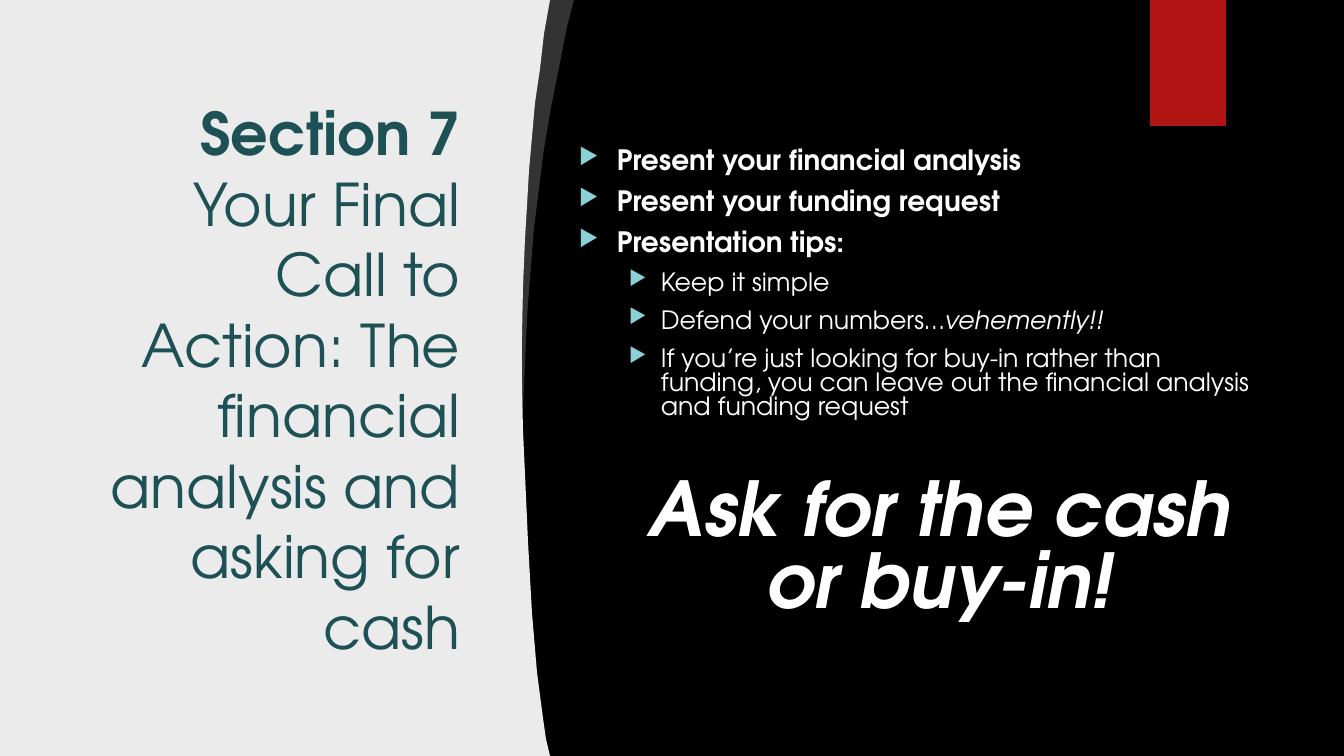
"""Build the Section 7 slide: curved title panel, bulleted tips and a closing call."""
from lxml import etree
from pptx import Presentation
from pptx.dml.color import RGBColor
from pptx.enum.shapes import MSO_SHAPE as SHAPE
from pptx.enum.text import MSO_ANCHOR as ANCHOR, PP_ALIGN as ALIGN
from pptx.oxml.ns import qn
from pptx.util import Pt

PX = 914400 / 100.8
FONT = "TeX Gyre Adventor"
BLACK, WHITE, RED = "000000", "FFFFFF", "B01513"
PANEL, TEAL, AQUA = "EBEBEB", "1E5155", "8AD0D6"


def paint(fill, color):
    fill.solid()
    fill.fore_color.rgb = RGBColor.from_string(color)


def add_run(p, text, size, color, bold=False, italic=False):
    r = p.add_run()
    r.text = text
    r.font.name, r.font.size = FONT, Pt(size)
    r.font.bold, r.font.italic = bold, italic
    r.font.color.rgb = RGBColor.from_string(color)


prs = Presentation()
prs.slide_width, prs.slide_height = round(1344 * PX), round(756 * PX)
s = prs.slides.add_slide(prs.slide_layouts[6])
paint(s.background.fill, BLACK)

band = [(574, 0), (521, 0), (520, 18), (515, 116), (512, 228), (512, 333),
        (516, 405), (523, 409), (524, 387), (526, 341), (528, 304), (531, 267),
        (534, 228), (539, 189), (544, 149), (551, 108), (559, 68), (567, 27)]
panel = [(0, 0), (550, 0), (544, 34), (540, 69), (535, 103), (532, 137),
         (529, 171), (527, 206), (525, 239), (523, 288), (522, 337), (522, 384),
         (523, 429), (525, 474), (528, 541), (532, 613), (537, 672), (543, 718),
         (546, 739), (550, 756), (0, 756)]
backdrop = s.shapes.add_shape(SHAPE.RECTANGLE, 0, 0, prs.slide_width, prs.slide_height)
outlines = []
for points in (band, panel):
    builder = s.shapes.build_freeform(*points[0], scale=PX)
    builder.add_line_segments(points[1:], close=True)
    outlines.append(builder.convert_to_shape())
tab = s.shapes.add_shape(SHAPE.RECTANGLE, *[round(v * PX) for v in (1150, 0, 76, 126)])
for sp, color in zip((backdrop, *outlines, tab), (BLACK, WHITE, PANEL, RED)):
    paint(sp.fill, color)
    sp.line.fill.background()
    sp.shadow.inherit = False
band_color = outlines[0].fill._xPr.find(qn("a:solidFill"))[0]
etree.SubElement(band_color, qn("a:alpha"), val="20000")

frames = []
for box in ((58, 84, 412, 590), (569, 144, 691, 530)):
    tf = s.shapes.add_textbox(*[round(v * PX) for v in box]).text_frame
    tf.word_wrap = True
    frames.append(tf)
title, body = frames

title.vertical_anchor = ANCHOR.MIDDLE
p = title.paragraphs[0]
p.alignment = ALIGN.RIGHT
add_run(p, "Section 7", 42, TEAL, bold=True)
p.add_line_break()
add_run(p, "Your Final Call to Action: The financial analysis and asking for cash", 42, TEAL)

bullets = [
    (0, ["Present your financial analysis"]),
    (0, ["Present your funding request"]),
    (0, ["Presentation tips:"]),
    (1, ["Keep it simple"]),
    (1, ["Defend your numbers…", "vehemently!!"]),
    (1, ["If you’re just looking for buy-in rather than funding, "
         "you can leave out the financial analysis and funding request"]),
]
for i, (level, texts) in enumerate(bullets):
    p = body.add_paragraph() if i else body.paragraphs[0]
    p.level, p.line_spacing = level, 0.8
    p.space_before = Pt(10 if i else 0)
    margin, hang = ((38, 38), (82, 32))[level]
    pPr = p._p.get_or_add_pPr()
    pPr.set("marL", str(round(margin * PX)))
    pPr.set("indent", str(round(-hang * PX)))
    bullet_color = etree.SubElement(pPr, qn("a:buClr"))
    etree.SubElement(bullet_color, qn("a:srgbClr"), val=AQUA)
    etree.SubElement(pPr, qn("a:buSzPct"), val="80000")
    etree.SubElement(pPr, qn("a:buChar"), char="▶")
    for j, text in enumerate(texts):
        add_run(p, text, (20, 18)[level], WHITE, bold=level == 0, italic=j == 1)

p = body.add_paragraph()
p.level, p.line_spacing, p.space_before = 1, 0.8, Pt(41)
p.alignment = ALIGN.CENTER
p._p.get_or_add_pPr().set("marL", str(round(50 * PX)))
add_run(p, "Ask for the cash or buy-in!", 54, WHITE, bold=True, italic=True)

prs.save("out.pptx")
